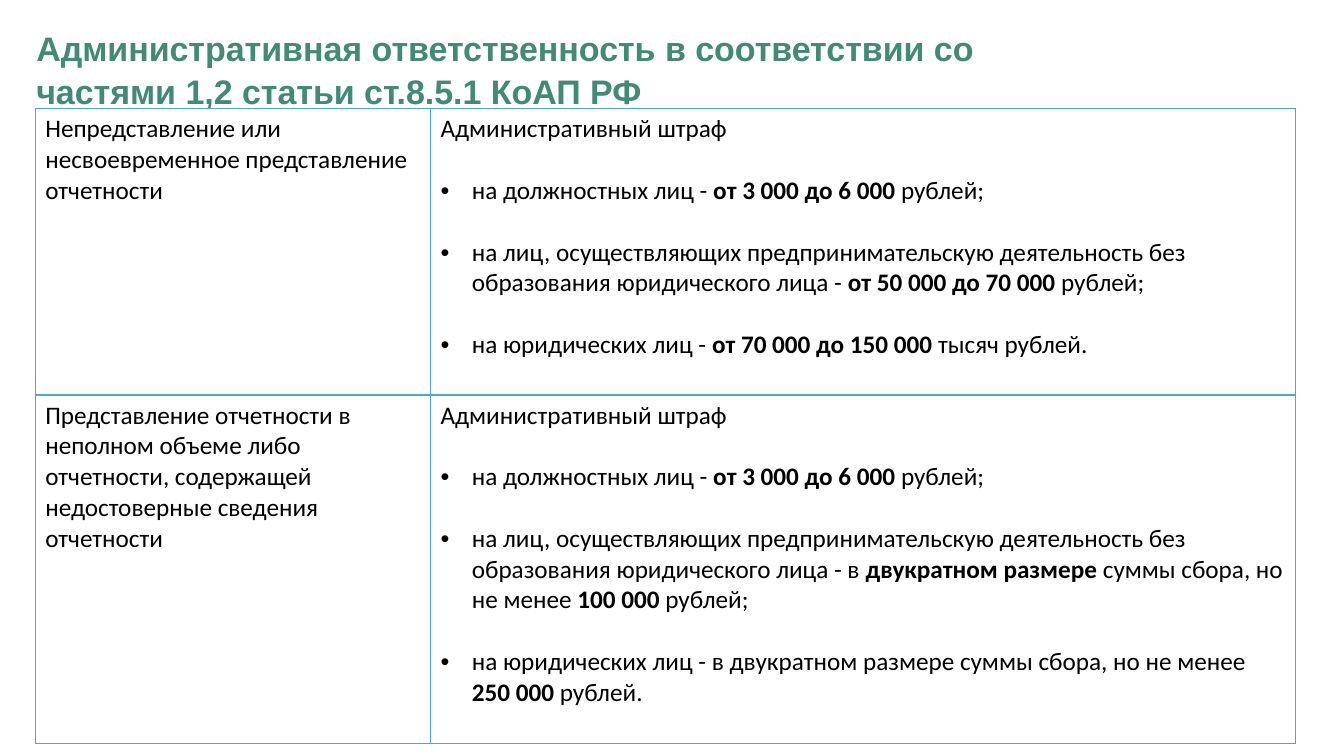
"""Build a slide with a table of administrative fines for reporting offences."""
import pptx
import pptx.util
import pptx.dml.color
import pptx.enum.text
import pptx.oxml
import pptx.oxml.ns

COLORS = {"title": "418A76", "text": "000000", "border": "4BACC6", "cell": "FFFFFF"}
TITLE_FORMAT = {"name": "Arial", "size": pptx.util.Pt(24.3), "bold": True}
BODY_FORMAT = {"name": "Calibri", "size": pptx.util.Pt(18)}
FRAME_FORMAT = {
    "margin_left": 0, "margin_top": 0, "margin_right": 0, "margin_bottom": 0,
    "word_wrap": True,
    "auto_size": pptx.enum.text.MSO_AUTO_SIZE.NONE,
    "vertical_anchor": pptx.enum.text.MSO_ANCHOR.TOP,
}
COLUMN_WIDTHS = [3.92, 8.58]
ROW_HEIGHTS = [2.84, 3.46]
BORDER_WIDTHS = [
    {"lnL": 1, "lnR": 1, "lnT": 1, "lnB": 2},
    {"lnL": 1, "lnR": 1, "lnT": 2, "lnB": 1},
]
BULLET_INDENT = pptx.util.Inches(0.31)
FINE = "Административный штраф"
OFFICIALS = "на должностных лиц - *от 3 000 до 6 000 *рублей;"
ENTREPRENEURS = (
    "на лиц, осуществляющих предпринимательскую деятельность "
    "без образования юридического лица - "
)
OFFENCES = [
    ("Непредставление или несвоевременное представление отчетности", [
        OFFICIALS,
        ENTREPRENEURS + "*от 50 000 до 70 000 *рублей;",
        "на юридических лиц - *от 70 000 до 150 000 *тысяч рублей.",
    ]),
    ("Представление отчетности в неполном объеме либо отчетности, "
     "содержащей недостоверные сведения отчетности", [
        OFFICIALS,
        ENTREPRENEURS + "в* двукратном размере *суммы сбора, но не менее *100 000 *рублей;",
        "на юридических лиц - в двукратном размере суммы сбора, "
        "но не менее *250 000 *рублей.",
    ]),
]


def add_runs(paragraph, marked_text, formats, color):
    """Write text into a paragraph, with bold parts between asterisks."""
    for index, part in enumerate(marked_text.split("*")):
        run = paragraph.add_run()
        run.text = part
        run.font.bold = index % 2 == 1
        run.font.color.rgb = pptx.dml.color.RGBColor.from_string(COLORS[color])
        for key, value in formats.items():
            setattr(run.font, key, value)


def format_cell(cell, border_widths):
    """Give a cell its borders and fill."""
    properties = cell._tc.get_or_add_tcPr()
    for side, width in border_widths.items():
        properties.append(pptx.oxml.parse_xml(
            f'<a:{side} {pptx.oxml.ns.nsdecls("a")} w="{pptx.util.Pt(width)}">'
            f'<a:solidFill><a:srgbClr val="{COLORS["border"]}"/></a:solidFill></a:{side}>'
        ))
    cell.fill.solid()
    cell.fill.fore_color.rgb = pptx.dml.color.RGBColor.from_string(COLORS["cell"])


deck = pptx.Presentation()
deck.slide_width = pptx.util.Inches(13.33)
deck.slide_height = pptx.util.Inches(7.5)
slide = deck.slides.add_slide(deck.slide_layouts[5])

heading = slide.shapes.title
for key, value in {"left": 0.36, "top": 0.25, "width": 10.72, "height": 0.71}.items():
    setattr(heading, key, pptx.util.Inches(value))
for key, value in FRAME_FORMAT.items():
    setattr(heading.text_frame, key, value)
heading_line = heading.text_frame.paragraphs[0]
heading_line.alignment = pptx.enum.text.PP_ALIGN.LEFT
heading_line.line_spacing = 1.05
add_runs(
    heading_line,
    "Административная ответственность в соответствии со частями 1,2 статьи ст.8.5.1 КоАП РФ",
    TITLE_FORMAT, "title",
)

fines = slide.shapes.add_table(
    len(ROW_HEIGHTS), len(COLUMN_WIDTHS),
    pptx.util.Inches(0.35), pptx.util.Inches(1.08),
    pptx.util.Inches(sum(COLUMN_WIDTHS)), pptx.util.Inches(sum(ROW_HEIGHTS)),
).table
fines.first_row = False
fines.horz_banding = False
for column, width in zip(fines.columns, COLUMN_WIDTHS):
    column.width = pptx.util.Inches(width)

for row, height, borders, (offence, penalties) in zip(
    fines.rows, ROW_HEIGHTS, BORDER_WIDTHS, OFFENCES
):
    row.height = pptx.util.Inches(height)
    for cell, opening in zip(row.cells, [offence, FINE]):
        format_cell(cell, borders)
        add_runs(cell.text_frame.paragraphs[0], opening, BODY_FORMAT, "text")
    for penalty in penalties:
        item = row.cells[1].text_frame.add_paragraph()
        bullet = item._p.get_or_add_pPr()
        bullet.set("marL", str(BULLET_INDENT))
        bullet.set("indent", str(-BULLET_INDENT))
        for tag in ('buFont typeface="Arial"', 'buChar char="•"'):
            name, attribute = tag.split(" ")
            bullet.append(pptx.oxml.parse_xml(
                f'<a:{name} {pptx.oxml.ns.nsdecls("a")} {attribute}/>'
            ))
        item.space_before = pptx.util.Pt(22)
        add_runs(item, penalty, BODY_FORMAT, "text")

deck.save("out.pptx")
